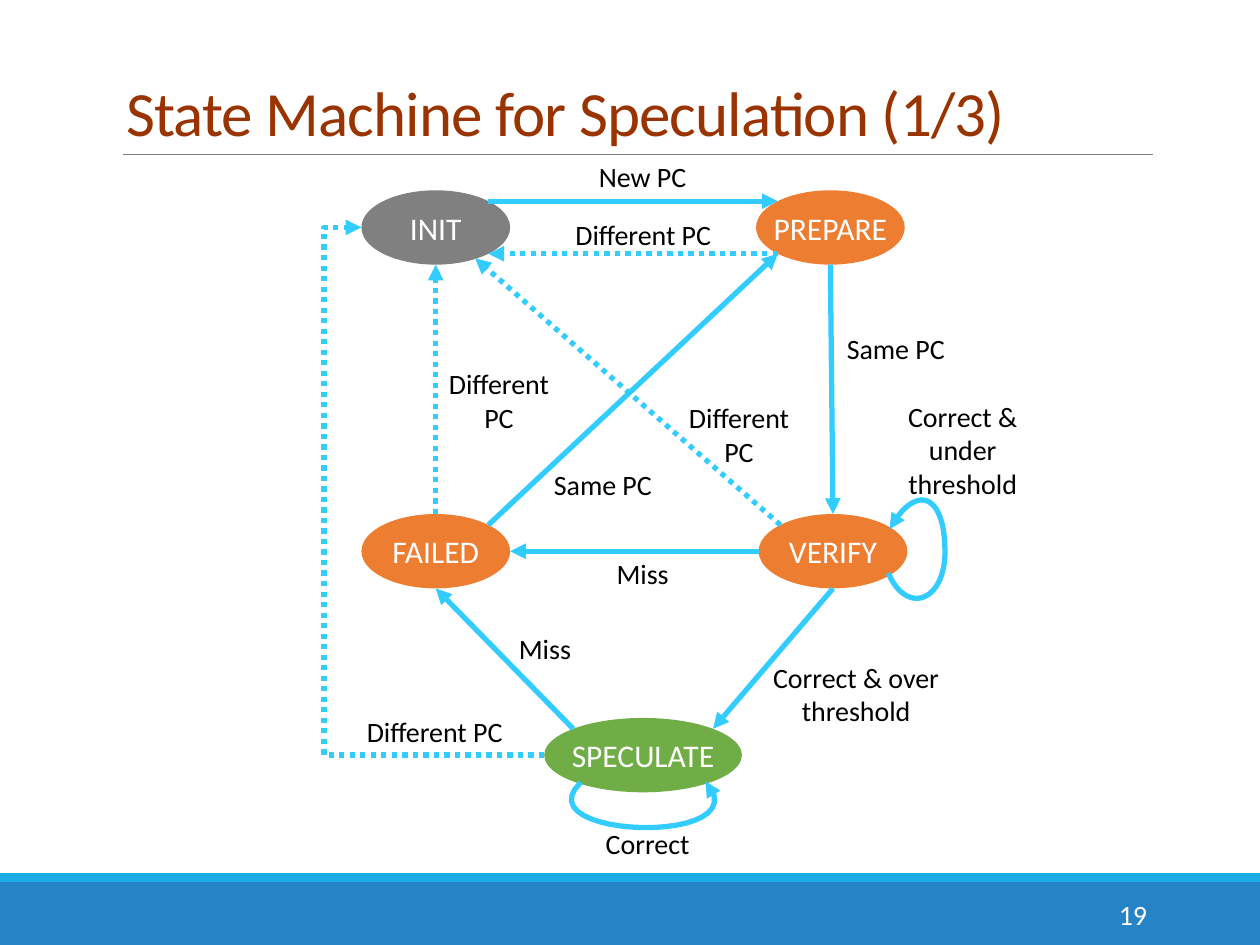
from math import cos, sin, radians
from lxml import etree
from pptx import Presentation
from pptx.dml.color import RGBColor
from pptx.enum import dml, shapes, text
from pptx.oxml.ns import qn
from pptx.util import Pt

TITLE = "State Machine for Speculation (1/3)"
PAGE = "19"
SKY, ORANGE, GRAY = "33CCFF", "ED7D31", "808080"
HIGH = 42.5  # height of every state

# name: centre x, centre y, width, colour
STATES = {
    "INIT": (249, 130, 85, GRAY),
    "PREPARE": (474.5, 130, 85, ORANGE),
    "VERIFY": (476, 315, 85, ORANGE),
    "FAILED": (249, 315, 85, ORANGE),
    "SPECULATE": (367.5, 431.5, 113, "70AD47"),
}

# from state, side, to state, side, dotted
MOVES = [
    ("INIT", "NE", "PREPARE", "NW", False),
    ("PREPARE", "S", "VERIFY", "N", False),
    ("VERIFY", "S", "SPECULATE", "NE", False),
    ("SPECULATE", "NW", "FAILED", "S", False),
    ("FAILED", "N", "INIT", "S", True),
    ("VERIFY", "W", "FAILED", "E", False),
    ("PREPARE", "SW", "INIT", "SE", True),
    ("VERIFY", "NW", "INIT", (271.5, 147.6), True),
    ("FAILED", "NE", "PREPARE", "SW", False),
]

# Bezier points of the self loops
LOOPS = [
    [(331.9, 447.1), (298.1, 479.5), (436.3, 483.8), (403.2, 446.4)],
    [(507.6, 327.6), (518.4, 352.1), (540, 343.4), (540, 315.4),
     (540, 280.8), (522.7, 276.5), (508.3, 302.4)],
]

# paragraphs, centre x, top, width, number of lines
LABELS = [
    (["Correct & over threshold"], 489.2, 373.7, 110, 2),
    (["Miss"], 311.4, 357.1, 50, 1),
    (["Different PC"], 422.3, 225.4, 78.5, 2),
    (["Different PC"], 248.4, 404.6, 105, 1),
    (["Different PC"], 285.1, 205.9, 82, 2),
    (["Same PC"], 344.5, 263.5, 78.5, 1),
    (["Same PC"], 511.9, 185.8, 76.3, 1),
    (["Correct"], 370.1, 468.7, 64, 1),
    (["Correct &", "under threshold"], 550.1, 224.6, 118, 3),
    (["New PC"], 367.2, 87.8, 76.3, 1),
    (["Different PC"], 367.6, 121, 110, 1),
    (["Miss"], 367.2, 314.6, 52, 1),
]

SIDES = {side: radians(45 * i) for i, side in
         enumerate(["E", "SE", "S", "SW", "W", "NW", "N", "NE"])}
MID, LOW, TOP = (text.MSO_ANCHOR.MIDDLE, text.MSO_ANCHOR.BOTTOM,
                 text.MSO_ANCHOR.TOP)
LEFT, MIDST, RIGHT = (text.PP_ALIGN.LEFT, text.PP_ALIGN.CENTER,
                      text.PP_ALIGN.RIGHT)

deck = Presentation()
deck.slide_width, deck.slide_height = Pt(720), Pt(540)
page = deck.slides.add_slide(deck.slide_layouts[6])
parts = page.shapes


def color(code):
    return RGBColor.from_string(code)


def write(shape, paras, size, code, align=MIDST, anchor=TOP, wrap=True):
    frame = shape.text_frame
    frame.word_wrap = wrap
    frame.vertical_anchor = anchor
    frame.text = "\n".join(paras)
    for para in frame.paragraphs:
        para.alignment = align
        para.font.size = Pt(size)
        para.font.name = "Calibri"
        para.font.color.rgb = color(code)
    return frame


def box(x, y, w, h, *args):
    return write(parts.add_textbox(Pt(x), Pt(y), Pt(w), Pt(h)), *args)


def solid(kind, x, y, w, h, code):
    shape = parts.add_shape(kind, Pt(x), Pt(y), Pt(w), Pt(h))
    shape.shadow.inherit = False
    shape.fill.solid()
    shape.fill.fore_color.rgb = color(code)
    shape.line.fill.background()
    return shape


def stroke(shape, code=SKY, width=3, dotted=False, head=True):
    line = shape.line
    line.color.rgb = color(code)
    line.width = Pt(width)
    if dotted:
        line.dash_style = dml.MSO_LINE.ROUND_DOT
    if head:
        ln = shape._element.spPr.find(qn("a:ln"))
        etree.SubElement(ln, qn("a:tailEnd"), type="triangle")


def link(kind, start, end, **style):
    wire = parts.add_connector(kind, *(Pt(v) for v in (*start, *end)))
    stroke(wire, **style)
    etree.SubElement(wire._element.spPr, qn("a:effectLst"))
    return wire


def site(name, side):
    if isinstance(side, tuple):
        return side
    x, y, w, _ = STATES[name]
    turn = SIDES[side]
    return x + w / 2 * cos(turn), y + HIGH / 2 * sin(turn)


def bezier(a, b, c, d, steps=24):
    for i in range(1, steps + 1):
        t = i / steps
        s = 1 - t
        yield tuple(Pt(s**3 * p + 3 * s * s * t * q + 3 * s * t * t * r + t**3 * v)
                    for p, q, r, v in zip(a, b, c, d))


# Footer bands, title and page number
RECT, OVAL = shapes.MSO_SHAPE.RECTANGLE, shapes.MSO_SHAPE.OVAL
LINE, ELBOW = shapes.MSO_CONNECTOR.STRAIGHT, shapes.MSO_CONNECTOR.ELBOW
solid(RECT, 0, 504, 720, 36, "2683C6")
solid(RECT, 0, 499, 720, 5, "1CADE4")
link(LINE, (70.5, 88.5), (659, 88.5), code=GRAY, width=0.5, head=False)
para = box(65, 18.7, 594, 70, [TITLE], 36, "993300", LEFT, LOW).paragraphs[0]
para.line_spacing = 0.85
para.runs[0]._r.get_or_add_rPr().set("spc", "-50")
box(584.6, 508.3, 78, 28.8, [PAGE], 16, "FFFFFF", RIGHT, MID)

# States
for name, (x, y, w, code) in STATES.items():
    oval = solid(OVAL, x - w / 2, y - HIGH / 2, w, HIGH, code)
    write(oval, [name], 18, "FFFFFF", MIDST, MID, False)

# Moves between states
for first, out, last, into, dotted in MOVES:
    link(LINE, site(first, out), site(last, into), dotted=dotted)

# Way back around the left side
back = link(ELBOW, site("SPECULATE", "W"), site("INIT", "W"), dotted=True)
geom = back._element.spPr.find(qn("a:prstGeom"))
guides = geom.find(qn("a:avLst"))
if guides is None:
    guides = etree.SubElement(geom, qn("a:avLst"))
etree.SubElement(guides, qn("a:gd"), name="adj1", fmla="val 120500")

# Self loops
for dots in LOOPS:
    pen = parts.build_freeform(Pt(dots[0][0]), Pt(dots[0][1]))
    for i in range(0, len(dots) - 1, 3):
        pen.add_line_segments(list(bezier(*dots[i:i + 4])), close=False)
    loop = pen.convert_to_shape()
    loop.shadow.inherit = False
    loop.fill.background()
    stroke(loop)

# Labels
for paras, x, y, w, rows in LABELS:
    box(x - w / 2, y, w, 7.2 + 19.4 * rows, paras, 16, "000000")

deck.save("out.pptx")
